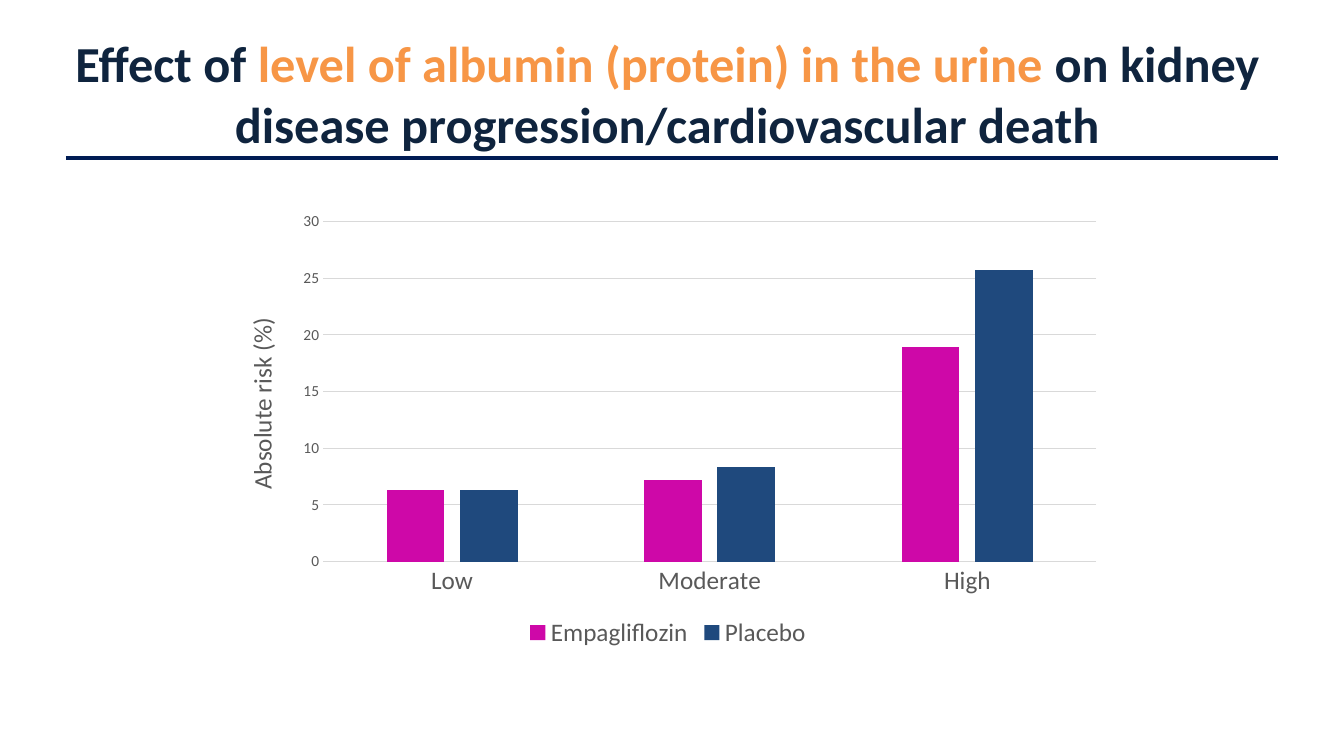
from lxml import etree
from pptx import Presentation
from pptx.chart.data import CategoryChartData
from pptx.dml.color import RGBColor
from pptx.enum.chart import XL_CHART_TYPE, XL_LEGEND_POSITION, XL_TICK_MARK
from pptx.enum.shapes import MSO_CONNECTOR
from pptx.enum.text import MSO_ANCHOR, PP_ALIGN
from pptx.oxml.ns import qn
from pptx.util import Pt

CLUSTERED = XL_CHART_TYPE.COLUMN_CLUSTERED
BOTTOM = XL_LEGEND_POSITION.BOTTOM
NO_TICK = XL_TICK_MARK.NONE
STRAIGHT = MSO_CONNECTOR.STRAIGHT
MIDDLE = MSO_ANCHOR.MIDDLE
CENTER = PP_ALIGN.CENTER

FONT = "Calibri"
COLORS = {
    "navy": "0F243E",
    "orange": "F79646",
    "rule": "001C54",
    "gray": "595959",
    "grid": "D9D9D9",
    "Empagliflozin": "CE08A8",
    "Placebo": "1F497D",
}


def px(*lengths):
    return [round(length * 914400 / 100.8) for length in lengths]


def add_text(paragraph, text, *, size, color, bold=False):
    run = paragraph.add_run()
    run.text = text
    run.font.name = FONT
    run.font.size = Pt(size)
    run.font.bold = bold
    run.font.color.rgb = RGBColor.from_string(COLORS[color])


presentation = Presentation()
presentation.slide_width, presentation.slide_height = px(1344, 756)
slide = presentation.slides.add_slide(presentation.slide_layouts[6])

rule = slide.shapes.add_connector(STRAIGHT, *px(66, 158, 1278, 158))
rule.line.color.rgb = RGBColor.from_string(COLORS["rule"])
rule.line.width = Pt(2.25)
etree.SubElement(rule._element.spPr, qn("a:effectLst"))

title = slide.shapes.add_textbox(*px(-9, 30, 1353, 126))
title.text_frame.word_wrap = True
title.text_frame.vertical_anchor = MIDDLE
title_paragraph = title.text_frame.paragraphs[0]
title_paragraph.alignment = CENTER
for text, color in [
    ("Effect of ", "navy"),
    ("level of albumin (protein) in the urine", "orange"),
    (" on kidney disease progression/cardiovascular death", "navy"),
]:
    add_text(title_paragraph, text, size=36, color=color, bold=True)

risk_data = CategoryChartData()
risk_data.categories = ["Low", "Moderate", "High"]
risk_data.add_series("Empagliflozin", [6.3, 7.2, 18.9])
risk_data.add_series("Placebo", [6.3, 8.3, 25.7])
chart = slide.shapes.add_chart(CLUSTERED, *px(222, 203, 892, 450), risk_data).chart
chart.has_title = False
chart.has_legend = True
chart.legend.position = BOTTOM
chart.legend.include_in_layout = False

plot = chart.plots[0]
plot.vary_by_categories = False
plot.gap_width = 219
plot.overlap = -27
for series in plot.series:
    series.format.fill.solid()
    series.format.fill.fore_color.rgb = RGBColor.from_string(COLORS[series.name])

category_axis, value_axis = chart.category_axis, chart.value_axis
for font, size in [
    (chart.font, 18),
    (chart.legend.font, 18),
    (category_axis.tick_labels.font, 18),
    (value_axis.tick_labels.font, 11),
]:
    font.name = FONT
    font.size = Pt(size)
    font.color.rgb = RGBColor.from_string(COLORS["gray"])

for axis in (category_axis, value_axis):
    axis.major_tick_mark = NO_TICK
    axis.minor_tick_mark = NO_TICK
value_axis.minimum_scale = 0
value_axis.maximum_scale = 30
value_axis.major_unit = 5
value_axis.format.line.fill.background()
for line in (category_axis.format.line, value_axis.major_gridlines.format.line):
    line.color.rgb = RGBColor.from_string(COLORS["grid"])
    line.width = Pt(0.75)

axis_paragraph = value_axis.axis_title.text_frame.paragraphs[0]
add_text(axis_paragraph, "Absolute risk (%)", size=18, color="gray")

presentation.save("out.pptx")
